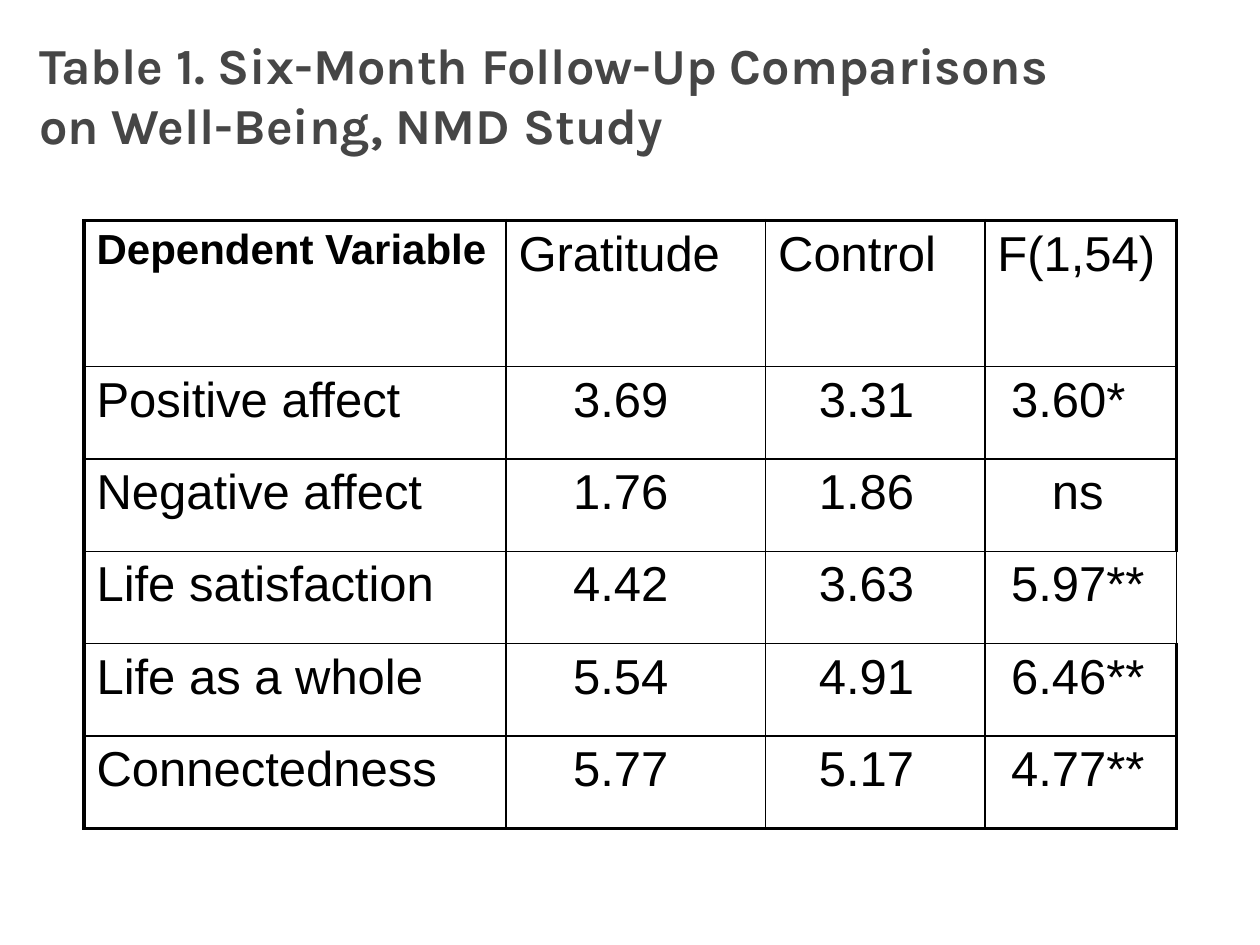
"""Build a slide with a table of six-month follow-up comparisons."""
from lxml.etree import SubElement
from pptx import Presentation
from pptx.dml.color import RGBColor
from pptx.enum.text import MSO_ANCHOR as Anchor, MSO_AUTO_SIZE as AutoSize, PP_ALIGN as Align
from pptx.oxml.ns import qn
from pptx.util import Pt

TITLE = "Table 1. Six-Month Follow-Up Comparisons on Well-Being, NMD Study"
HEADERS = ("Dependent Variable", "Gratitude", "Control", "F(1,54)")
RESULTS = [
    ("Positive affect", "3.69", "3.31", "3.60*"),
    ("Negative affect", "1.76", "1.86", "ns"),
    ("Life satisfaction", "4.42", "3.63", "5.97**"),
    ("Life as a whole", "5.54", "4.91", "6.46**"),
    ("Connectedness", "5.77", "5.17", "4.77**"),
]

GREY = RGBColor(0x46, 0x46, 0x46)
BLACK = RGBColor(0, 0, 0)
TABLE_LEFT, TABLE_TOP = 48, 126
COLUMN_WIDTHS = (241.2, 148.3, 125.3, 109.4)
ROW_HEIGHTS = (83.5,) + (52.8,) * len(RESULTS)
VALUE_INDENTS = (0, 31.1, 23.3, 7.8)
NS_INDENT = 31.1
CELL_MARGIN = 7.2
THIN, THICK = 1, 2.25
THIN_RIGHT_ROW = 3


def add_run(paragraph, text, font_name, size, color, bold):
    run = paragraph.add_run()
    run.text = text
    run.font.name, run.font.size, run.font.bold = font_name, Pt(size), bold
    run.font.color.rgb = color


def set_borders(cell, widths):
    properties = cell._tc.get_or_add_tcPr()
    for index, (side, width) in enumerate(widths.items()):
        line = SubElement(properties, qn(f"a:ln{side}"), w=str(Pt(width)))
        fill = SubElement(line, qn("a:solidFill"))
        SubElement(fill, qn("a:srgbClr"), val=str(BLACK))
        properties.insert(index, line)


def add_title(slide):
    title = slide.shapes.title
    title.left, title.top, title.width, title.height = Pt(15.1), Pt(18), Pt(631.4), Pt(72)
    frame = title.text_frame
    frame.word_wrap = True
    frame.auto_size = AutoSize.NONE
    frame.vertical_anchor = Anchor.MIDDLE
    paragraph = frame.paragraphs[0]
    paragraph.alignment = Align.LEFT
    add_run(paragraph, TITLE, "Karla", 28.8, GREY, True)


def add_results_table(slide):
    rows = [HEADERS, *RESULTS]
    last_row, last_column = len(rows) - 1, len(HEADERS) - 1
    table = slide.shapes.add_table(
        len(rows), len(HEADERS), Pt(TABLE_LEFT), Pt(TABLE_TOP),
        Pt(sum(COLUMN_WIDTHS)), Pt(sum(ROW_HEIGHTS))).table
    table.first_row = table.horz_banding = False
    for column, width in zip(table.columns, COLUMN_WIDTHS):
        column.width = Pt(width)
    for row, height in zip(table.rows, ROW_HEIGHTS):
        row.height = Pt(height)

    for r, texts in enumerate(rows):
        for c, text in enumerate(texts):
            cell = table.cell(r, c)
            cell.fill.background()
            indent = NS_INDENT if text == "ns" else VALUE_INDENTS[c] if r else 0
            cell.margin_left = Pt(CELL_MARGIN + indent)
            corner = r == c == 0
            add_run(cell.text_frame.paragraphs[0], text, "Arial",
                    24 if corner else 28, BLACK, corner)
            thick_right = c == last_column and r != THIN_RIGHT_ROW
            set_borders(cell, {
                "L": THICK if c == 0 else THIN,
                "R": THICK if thick_right else THIN,
                "T": THICK if r == 0 else THIN,
                "B": THICK if r == last_row else THIN,
            })


def main():
    presentation = Presentation()
    presentation.slide_width, presentation.slide_height = Pt(720), Pt(540)
    slide = presentation.slides.add_slide(presentation.slide_layouts[5])
    add_title(slide)
    add_results_table(slide)
    presentation.save("out.pptx")


if __name__ == "__main__":
    main()
